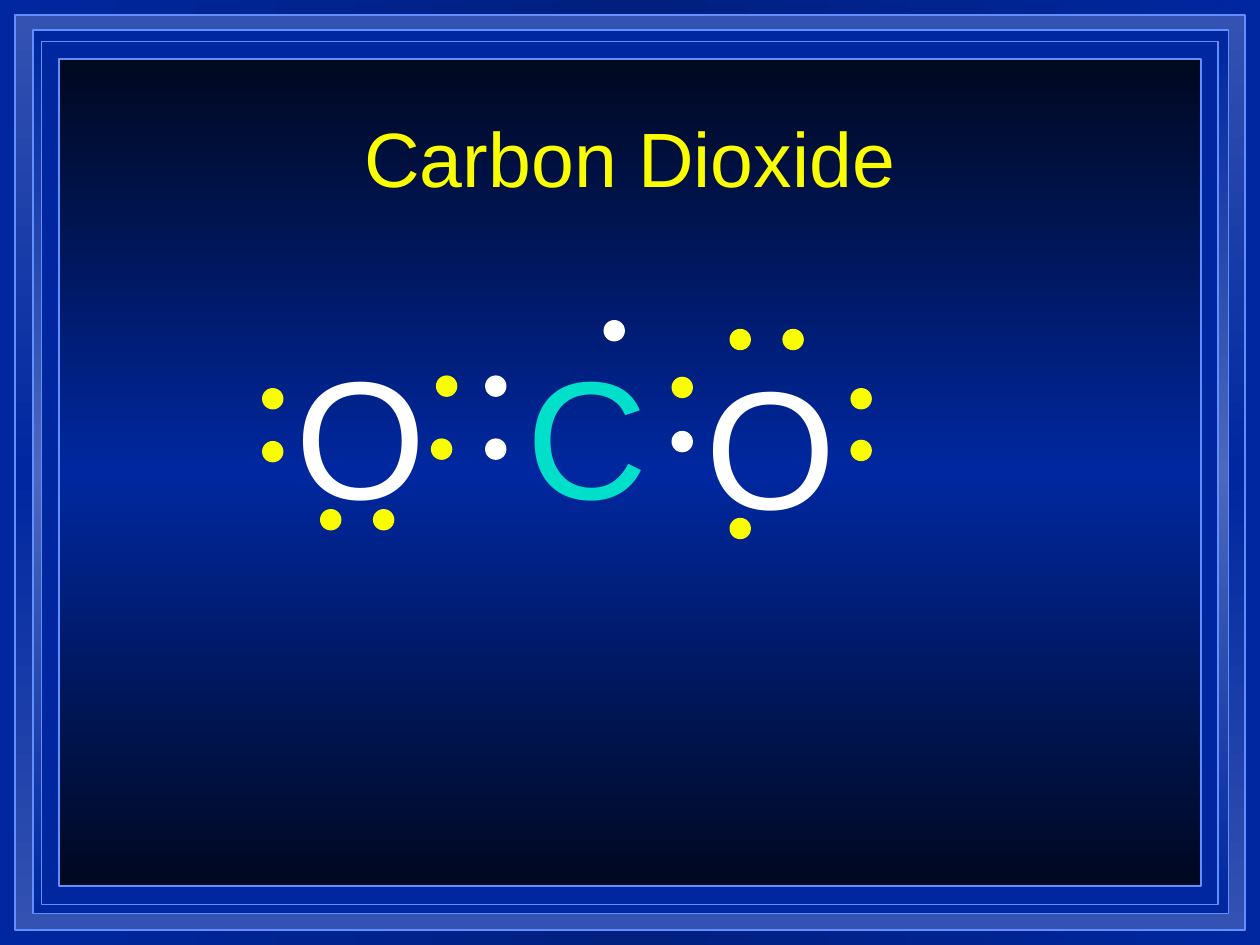
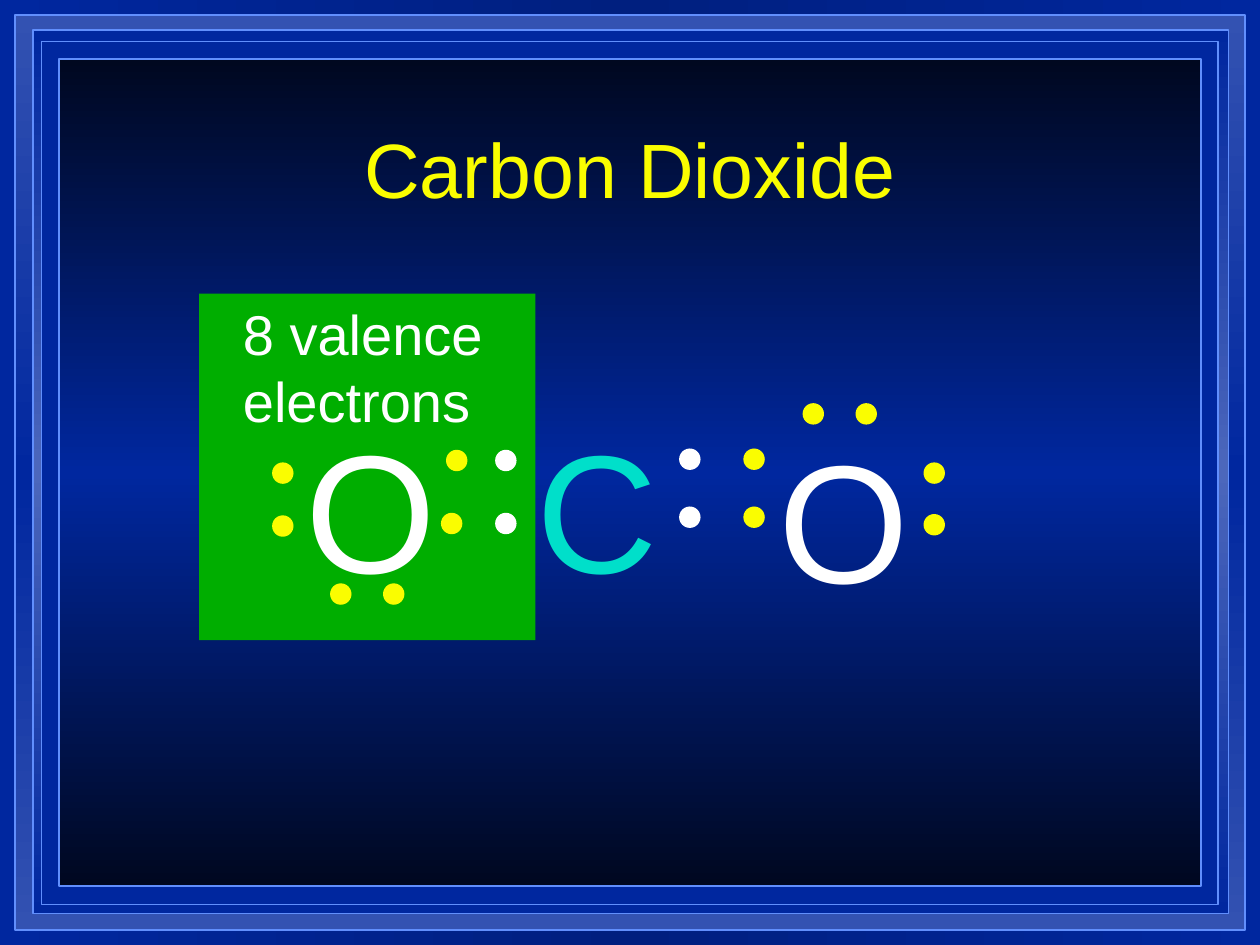
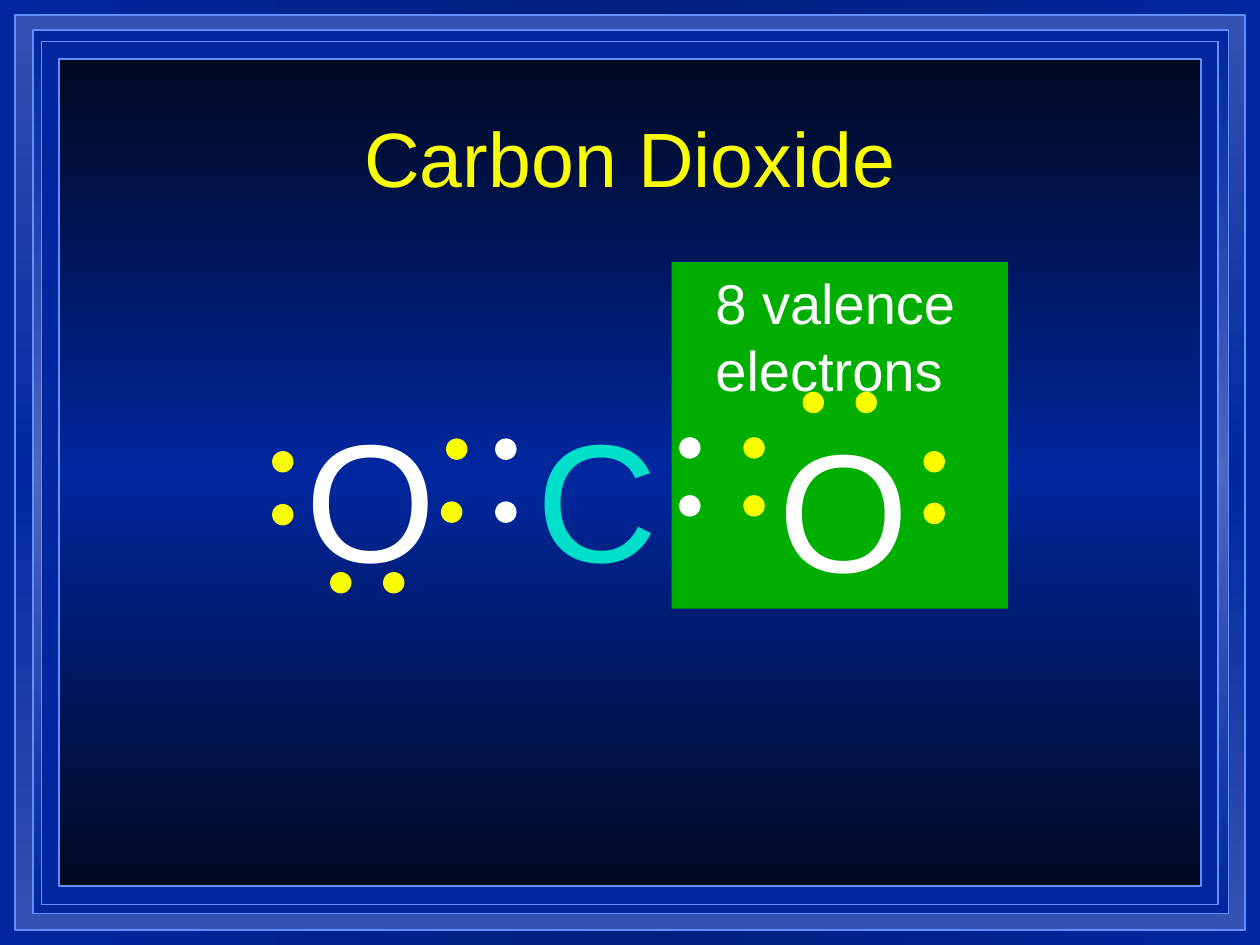
from copy import deepcopy
from dataclasses import dataclass

from pptx import Presentation
from pptx.dml.color import RGBColor
from pptx.enum.shapes import MSO_SHAPE
from pptx.enum.text import MSO_ANCHOR, PP_ALIGN
from pptx.util import Inches, Pt


@dataclass(frozen=True)
class Theme:
    font: str = "Arial"
    navy: str = "00279F"
    dusk: str = "001F7F"
    night: str = "000820"
    steel: str = "3352B2"
    haze: str = "4C67BC"
    edge: str = "618FFD"
    yellow: str = "FAFD00"
    white: str = "FFFFFF"
    teal: str = "00DFCA"
    green: str = "00AE00"
    head: int = 44
    atom: int = 96
    note: int = 32


T = Theme()

# Nested frames, outermost first: place, then one colour or three stops
FRAMES = [
    ((0.12, 0.12, 9.76, 7.26), (T.steel, T.navy, T.steel)),
    ((0.26, 0.24, 9.49, 7.01), (T.navy, T.haze, T.navy)),
    ((0.33, 0.33, 9.34, 6.85), (T.navy,)),
    ((0.47, 0.47, 9.06, 6.56), (T.night, T.navy, T.night)),
]
TITLE = "Carbon Dioxide"
NOTE = "8 valence electrons"

# Electrons, measured from the corner of their own atom's box
DOT = 0.17
ATOM = (0.92, 1.7)
LEFT = [(-0.17, 0.5), (-0.17, 0.92), (0.29, 1.46), (0.71, 1.46),
        (1.17, 0.9), (1.21, 0.4)]
MID = [(-0.23, 0.4), (-0.23, 0.9)]
RIGHT = [(1.25, 0.42), (1.25, 0.83), (0.29, -0.05), (0.71, -0.05)]
LOOSE = {"mid": [(1.25, 0.84), (0.71, -0.04)],
         "right": [(-0.17, 0.33), (0.29, 1.45)]}
BONDED = {"mid": [(1.23, 0.39), (1.23, 0.85)],
          "right": [(-0.18, 0.31), (-0.18, 0.77)]}

# start: left oxygen; gap: from it to the right oxygen; box: green field
SLIDES = [
    {"top": 0.83, "start": (2.25, 2.58), "gap": 3.25, "bond": LOOSE},
    {"top": 0.92, "start": (2.33, 3.17), "gap": 3.75, "bond": BONDED,
     "box": (1.58, 2.33), "inset": 0.25},
    {"top": 0.83, "start": (2.33, 3.08), "gap": 3.75, "bond": BONDED,
     "box": (5.33, 2.08), "inset": 0.25},
]


def paint(fill, node, tones, angle=90):
    """Fill with one colour, or with evenly spaced gradient stops."""
    if len(tones) == 1:
        fill.solid()
        fill.fore_color.rgb = RGBColor.from_string(tones[0])
        return
    fill.gradient()
    fill.gradient_angle = angle
    stops = node.xpath(".//a:gsLst")[0]
    stops.append(deepcopy(stops[-1]))
    for i, (stop, tone) in enumerate(zip(fill.gradient_stops, tones)):
        stop.position = i / (len(tones) - 1)
        stop.color.rgb = RGBColor.from_string(tone)


def draw(slide, kind, place, tones, edge=None):
    shape = slide.shapes.add_shape(kind, *map(Inches, place))
    shape.shadow.inherit = False
    paint(shape.fill, shape.element, tones)
    if edge:
        shape.line.color.rgb = RGBColor.from_string(edge)
        shape.line.width = Pt(1)
    else:
        shape.line.fill.background()
    return shape


def write(slide, text, place, size, tone, mid=False):
    frame = slide.shapes.add_textbox(*map(Inches, place)).text_frame
    frame.word_wrap = True
    frame.vertical_anchor = MSO_ANCHOR.MIDDLE if mid else MSO_ANCHOR.TOP
    para = frame.paragraphs[0]
    para.alignment = PP_ALIGN.CENTER if mid else PP_ALIGN.LEFT
    run = para.add_run()
    run.text = text
    look = {"name": T.font, "size": Pt(size)}
    for key, value in look.items():
        setattr(run.font, key, value)
    run.font.color.rgb = RGBColor.from_string(tone)


def bond(slide, spot, sign, tone, groups):
    """Draw an atom's letter and the electrons around it."""
    x, y = spot
    write(slide, sign, (x, y, *ATOM), T.atom, tone)
    for hue, dots in groups:
        for dx, dy in dots:
            draw(slide, MSO_SHAPE.OVAL, (x + dx, y + dy, DOT, DOT), (hue,))


def dress(layout, slide):
    """Give the layout its background and frames."""
    paint(layout.background.fill, layout.element,
          (T.navy, T.dusk, T.navy), 0)
    for place, tones in FRAMES:
        shape = draw(slide, MSO_SHAPE.RECTANGLE, place, tones, T.edge)
        layout.shapes.element.append(shape.element)


def fill(slide, data):
    if "box" in data:
        draw(slide, MSO_SHAPE.RECTANGLE, (*data["box"], 2.67, 2.75),
             (T.green,))
    write(slide, TITLE, (0.75, data["top"], 8.5, 0.83), T.head, T.yellow, True)

    # Three atoms in a row
    x, y = data["start"]
    pairs = data["bond"]
    bond(slide, (x + data["gap"], y + 0.08), "O", T.white,
         [(T.yellow, RIGHT + pairs["right"])])
    bond(slide, (x + 1.83, y), "C", T.teal,
         [(T.white, MID + pairs["mid"])])
    bond(slide, (x, y), "O", T.white, [(T.yellow, LEFT)])

    if "box" in data:
        left, top = data["box"]
        write(slide, NOTE, (left + data["inset"], top, 2.17, 1.17),
              T.note, T.white)


def main():
    deck = Presentation()
    deck.slide_width, deck.slide_height = Inches(10), Inches(7.5)
    blank = deck.slide_layouts[6]
    for i, data in enumerate(SLIDES):
        slide = deck.slides.add_slide(blank)
        if i == 0:
            dress(blank, slide)
        fill(slide, data)
    deck.save("out.pptx")


if __name__ == "__main__":
    main()
